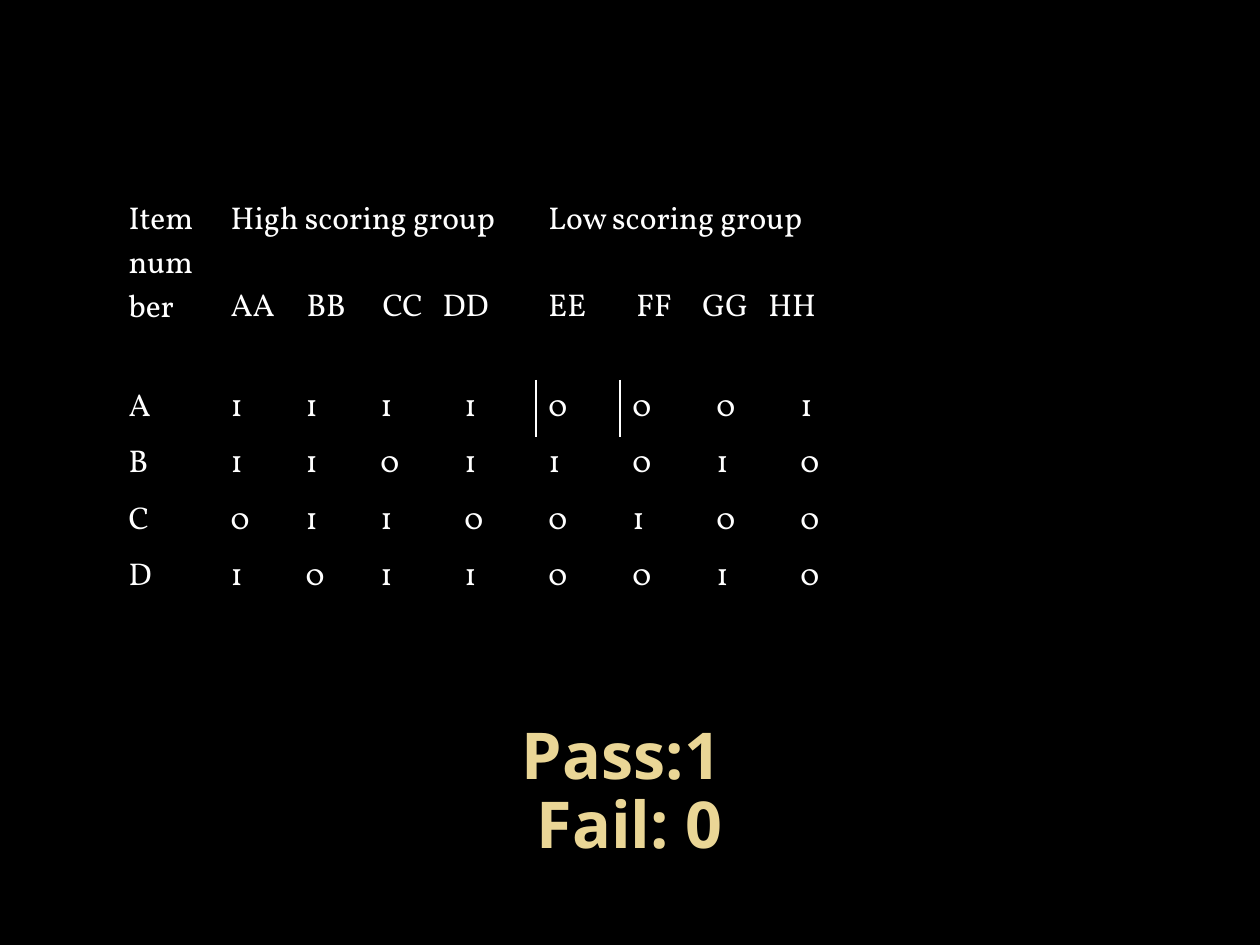
import pptx
import pptx.dml.color
import pptx.enum.text
import pptx.oxml
import pptx.oxml.ns
import pptx.util

WHITE = pptx.dml.color.RGBColor(0xFF, 0xFF, 0xFF)
BLACK = pptx.dml.color.RGBColor(0x00, 0x00, 0x00)
GOLD = pptx.dml.color.RGBColor(0xEA, 0xD6, 0x96)
NO_STYLE = "{2D5ABB26-0587-4C30-8999-92F81FD0307C}"
NS = pptx.oxml.ns.nsdecls("a")


def px(n):
    return pptx.util.Emu(round(n * 914400 / 126))


prs = pptx.Presentation()
prs.slide_width, prs.slide_height = px(1260), px(945)
s = prs.slides.add_slide(prs.slide_layouts[5])
s.background.fill.solid()
s.background.fill.fore_color.rgb = BLACK

# Scoring key in the title
sp = s.shapes.title
sp.left, sp.top, sp.width, sp.height = px(63), px(714), px(1134), px(158)
tf = sp.text_frame
tf.text = "Pass:1 \vFail: 0"
tf.auto_size = pptx.enum.text.MSO_AUTO_SIZE.NONE
tf.vertical_anchor = pptx.enum.text.MSO_ANCHOR.MIDDLE
p = tf.paragraphs[0]
p.alignment = pptx.enum.text.PP_ALIGN.CENTER
p.line_spacing = 0.9
for r in p.runs:
    r.font.name = "Open Sans"
    r.font.size = pptx.util.Pt(36.9)
    r.font.bold = True
    r.font.color.rgb = GOLD

# Item table
widths = [102, 75, 75] + [84] * 7
heights = [187] + [56] * 4
frame = s.shapes.add_table(len(heights), len(widths), px(116), px(193),
                           px(sum(widths)), px(sum(heights)))
table = frame.table
table.first_row = table.horz_banding = False
table._tbl.tblPr.find(pptx.oxml.ns.qn("a:tableStyleId")).text = NO_STYLE
for column, width in zip(table.columns, widths):
    column.width = px(width)
for row, height in zip(table.rows, heights):
    row.height = px(height)

# Header: group name above the tabbed student labels
table.cell(0, 0).text = "Item number"
groups = [
    (1, 4, "High scoring group", "AA\tBB\tCC\tDD", (76, 152, 212)),
    (5, 9, "Low scoring group", "EE\tFF\tGG\tHH", (88, 154, 220)),
]
for first, last, name, students, stops in groups:
    cell = table.cell(0, first)
    cell.merge(table.cell(0, last))
    cell.text = name
    p = cell.text_frame.add_paragraph()
    p.text = students
    p.space_before = pptx.util.Pt(25)
    tabs = "".join(f'<a:tab pos="{px(stop)}" algn="l"/>' for stop in stops)
    p._p.get_or_add_pPr().append(
        pptx.oxml.parse_xml(f"<a:tabLst {NS}>{tabs}</a:tabLst>"))

# Item scores, one digit per student
scores = {"A": "11110001", "B": "11011010", "C": "01100100", "D": "10110010"}
for i, (item, marks) in enumerate(scores.items(), 1):
    for j, value in enumerate(item + marks):
        table.cell(i, j).text = value

for cell in table.iter_cells():
    cell.fill.background()
    for p in cell.text_frame.paragraphs:
        for r in p.runs:
            r.font.name = "Vollkorn"
            r.font.size = pptx.util.Pt(18)
            r.font.color.rgb = WHITE

# Divider between the two groups in row A
for j, side in ((4, "lnR"), (5, "lnL")):
    table.cell(1, j)._tc.get_or_add_tcPr().insert(0, pptx.oxml.parse_xml(
        f'<a:{side} {NS} w="12700"><a:solidFill><a:srgbClr val="{WHITE}"/>'
        f'</a:solidFill></a:{side}>'))

prs.save("out.pptx")
